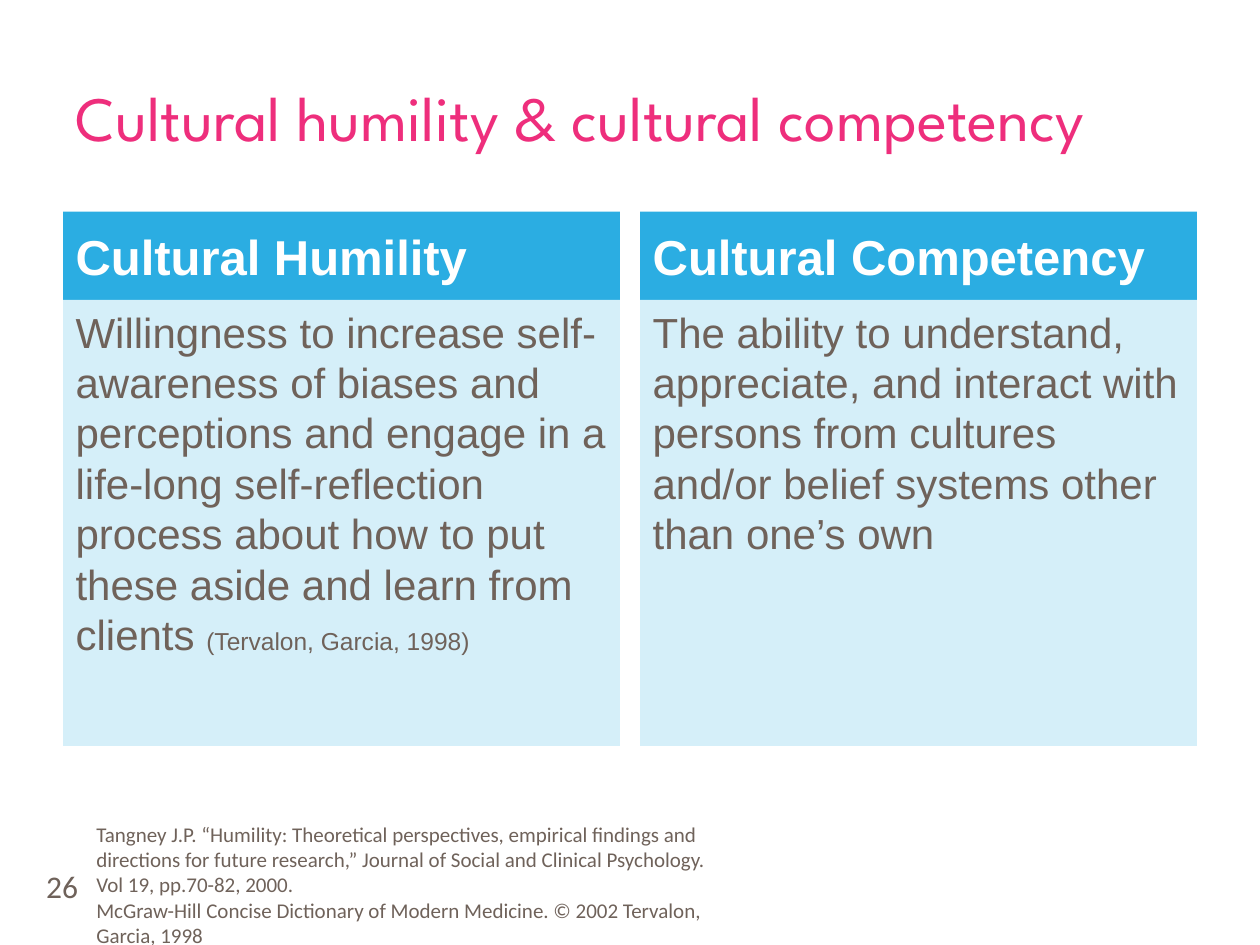
from lxml import etree
from pptx import Presentation
from pptx import util as u
from pptx.dml.color import RGBColor
from pptx.enum import shapes, text
from pptx.oxml.ns import qn

PINK = RGBColor(0xEE, 0x2E, 0x7C)
BLUE = RGBColor(0x2B, 0xAD, 0xE2)
PALE = RGBColor(0xD5, 0xEF, 0xF9)
BROWN = RGBColor(0x6F, 0x62, 0x5A)
WHITE = RGBColor(0xFF, 0xFF, 0xFF)

MARGIN, COL_W, COL_STEP = 36, 318.24, 329.76
HEAD_TOP, HEAD_H, BODY_H = 120.96, 50.4, 254.88

COLUMNS = [
    ("Cultural Humility",
     "Willingness to increase self-awareness of biases and perceptions and engage "
     "in a life-long self-reflection process about how to put these aside and "
     "learn from clients ",
     "(Tervalon, Garcia, 1998)"),
    ("Cultural Competency",
     "The ability to understand, appreciate, and interact with persons from "
     "cultures and/or belief systems other than one’s own",
     ""),
]
REFERENCES = [
    "Tangney J.P. “Humility: Theoretical perspectives, empirical findings and "
    "directions for future research,” Journal of Social and Clinical Psychology. "
    "Vol 19, pp.70-82, 2000.",
    "McGraw-Hill Concise Dictionary of Modern Medicine. © 2002 Tervalon, Garcia, 1998",
]


class Deck:
    heading_font, body_font, small_font = "League Spartan", "Arial", "Calibri"

    def __init__(self, prs, layout):
        self.s = prs.slides.add_slide(prs.slide_layouts[layout])

    def place(self, sp, left, top, width, height):
        sp.left, sp.top = u.Pt(left), u.Pt(top)
        sp.width, sp.height = u.Pt(width), u.Pt(height)

    def style(self, r, font, size, color, bold=False):
        r.font.name, r.font.size, r.font.bold = font, u.Pt(size), bold
        r.font.color.rgb = color

    def frame(self, sp, anchor):
        tf = sp.text_frame
        tf.word_wrap = True
        tf.auto_size = text.MSO_AUTO_SIZE.NONE
        tf.vertical_anchor = anchor
        return tf

    def title(self, words, *box):
        sp = self.s.shapes.title
        self.place(sp, *box)
        tf = self.frame(sp, text.MSO_ANCHOR.MIDDLE)
        tf.text = words
        p = tf.paragraphs[0]
        p.alignment = text.PP_ALIGN.LEFT
        self.style(p.runs[0], self.heading_font, 36, PINK)

    def panel(self, idx, box, fill, anchor, pieces, color, bold=False):
        """Fill a body placeholder with one unbulleted paragraph of (words, size) pieces."""
        sp = self.s.placeholders[idx]
        self.place(sp, *box)
        sp.fill.solid()
        sp.fill.fore_color.rgb = fill
        p = self.frame(sp, anchor).paragraphs[0]
        pPr = p._p.get_or_add_pPr()
        pPr.set("marL", "0")
        pPr.set("indent", "0")
        etree.SubElement(pPr, qn("a:buNone"))
        p.space_before = u.Pt(0)
        for words, size in pieces:
            r = p.add_run()
            r.text = words
            self.style(r, self.body_font, size, color, bold)

    def page_number(self, number, *box):
        sp = self.s.shapes.add_shape(shapes.MSO_SHAPE.OVAL, *map(u.Pt, box))
        sp.shadow.inherit = False
        sp.fill.background()
        sp.line.fill.background()
        tf = self.frame(sp, text.MSO_ANCHOR.TOP)
        tf.text = number
        p = tf.paragraphs[0]
        p.alignment = text.PP_ALIGN.LEFT
        self.style(p.runs[0], self.small_font, 18, BROWN)

    def references(self, lines, *box):
        sp = self.s.shapes.add_textbox(*map(u.Pt, box))
        tf = self.frame(sp, text.MSO_ANCHOR.TOP)
        tf.text = "\n".join(lines)
        for p in tf.paragraphs:
            self.style(p.runs[0], self.small_font, 12, BROWN)


def main():
    prs = Presentation()
    prs.slide_width, prs.slide_height = u.Pt(720), u.Pt(540)
    deck = Deck(prs, 4)
    deck.title("Cultural humility & cultural competency", MARGIN, 21.6, 648, 90)
    for i, (head, body, source) in enumerate(COLUMNS):
        left = MARGIN + i * COL_STEP
        deck.panel(2 * i + 1, (left, HEAD_TOP, COL_W, HEAD_H), BLUE,
                   text.MSO_ANCHOR.MIDDLE, [(head, 28)], WHITE, bold=True)
        pieces = [(body, 24)] + ([(source, 14)] if source else [])
        deck.panel(2 * i + 2, (left, HEAD_TOP + HEAD_H, COL_W, BODY_H), PALE,
                   text.MSO_ANCHOR.TOP, pieces, BROWN)
    deck.page_number("26", 12.24, 486, 48.24, 39.6)
    deck.references(REFERENCES, 48, 465.84, 372.24, 79.92)
    prs.save("out.pptx")


if __name__ == "__main__":
    main()
